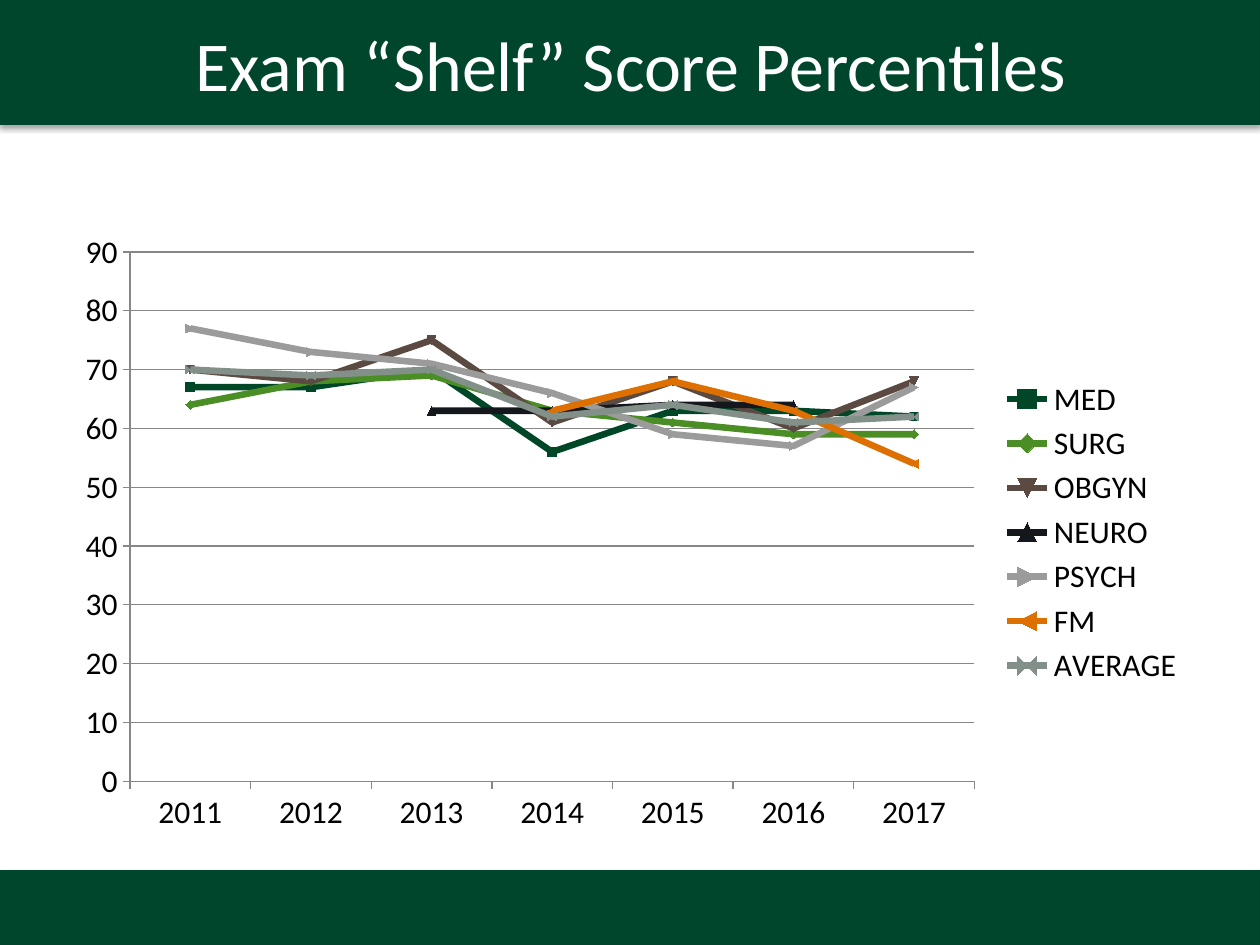
import dataclasses

import pptx
import pptx.chart.data
import pptx.dml.color
import pptx.enum.chart
import pptx.enum.shapes
import pptx.enum.text
import pptx.oxml
import pptx.oxml.ns
import pptx.util
from pptx.util import Inches


@dataclasses.dataclass(frozen=True)
class Theme:
    """Colours, font and type sizes of the deck."""

    font: str = "Calibri"
    title_size: int = 40
    chart_size: int = 18
    band: str = "00462D"
    band_edge: str = "00442D"
    title: str = "FFFFFF"
    text: str = "000000"
    axis: str = "878787"
    series: tuple = ("004728", "4B8E26", "5A4A42", "14181C", "9B9B9B", "DD7000", "83908A")


def rgb(code):
    """Turn a hex code into a colour."""
    return pptx.dml.color.RGBColor.from_string(code)


class SlideBuilder:
    """Draws styled elements on one slide."""

    def __init__(self, slide, theme):
        """Keep the slide and its style."""
        self.slide = slide
        self.theme = theme

    def set_font(self, font, size, color):
        """Apply the theme font with a size and colour."""
        font.name = self.theme.font
        font.size = pptx.util.Pt(size)
        font.bold = False
        font.color.rgb = rgb(color)

    def band(self, top, height):
        """Add a full-width band with a soft shadow."""
        band = self.slide.shapes.add_shape(
            pptx.enum.shapes.MSO_SHAPE.RECTANGLE, 0, Inches(top), Inches(10), Inches(height)
        )
        band.fill.solid()
        band.fill.fore_color.rgb = rgb(self.theme.band)
        band.line.color.rgb = rgb(self.theme.band_edge)
        band.line.width = pptx.util.Pt(0.75)
        band.shadow.inherit = False
        effects = band._element.spPr.find(pptx.oxml.ns.qn("a:effectLst"))
        effects.append(pptx.oxml.parse_xml(
            f'<a:outerShdw {pptx.oxml.ns.nsdecls("a")} blurRad="39370" dist="22860" '
            'dir="5400000" rotWithShape="0"><a:srgbClr val="000000">'
            '<a:alpha val="35000"/></a:srgbClr></a:outerShdw>'
        ))

    def title(self, text, left, top, width, height):
        """Fill the title placeholder and bring it in front of the bands."""
        title = self.slide.shapes.title
        title.left, title.top = Inches(left), Inches(top)
        title.width, title.height = Inches(width), Inches(height)
        title.text_frame.text = text
        title.text_frame.vertical_anchor = pptx.enum.text.MSO_ANCHOR.MIDDLE
        heading = title.text_frame.paragraphs[0]
        heading.alignment = pptx.enum.text.PP_ALIGN.CENTER
        self.set_font(heading.font, self.theme.title_size, self.theme.title)
        self.slide.shapes._spTree.append(title._element)

    def line_chart(self, years, scores, left, top, width, height):
        """Add a line chart with markers and a legend on the right."""
        data = pptx.chart.data.CategoryChartData()
        data.categories = years
        for name, values in scores.items():
            data.add_series(name, values)
        chart = self.slide.shapes.add_chart(
            pptx.enum.chart.XL_CHART_TYPE.LINE_MARKERS,
            Inches(left), Inches(top), Inches(width), Inches(height), data,
        ).chart
        chart.has_title = False
        self.set_font(chart.font, self.theme.chart_size, self.theme.text)
        chart.has_legend = True
        chart.legend.position = pptx.enum.chart.XL_LEGEND_POSITION.RIGHT
        chart.legend.include_in_layout = False
        chart.plots[0].vary_by_categories = False
        for series, color in zip(chart.plots[0].series, self.theme.series):
            series.smooth = False
            series.format.line.color.rgb = rgb(color)
            series.format.line.width = pptx.util.Pt(3.75)
            series.marker.size = 5
            series.marker.format.fill.solid()
            series.marker.format.fill.fore_color.rgb = rgb(color)
            series.marker.format.line.color.rgb = rgb(color)
        score_axis = chart.value_axis
        score_axis.minimum_scale, score_axis.maximum_scale = 0, 90
        score_axis.major_unit = 10
        score_axis.has_major_gridlines = True
        for axis in (chart.category_axis, score_axis):
            axis.major_tick_mark = pptx.enum.chart.XL_TICK_MARK.OUTSIDE
            axis.format.line.color.rgb = rgb(self.theme.axis)
        score_axis.major_gridlines.format.line.color.rgb = rgb(self.theme.axis)


def main():
    """Build and save the slide."""
    deck = pptx.Presentation()
    deck.slide_width, deck.slide_height = Inches(10), Inches(7.5)
    builder = SlideBuilder(deck.slides.add_slide(deck.slide_layouts[5]), Theme())

    builder.band(0, 0.99)
    builder.band(6.91, 0.59)
    builder.title("Exam “Shelf” Score Percentiles", 0.19, 0, 9.63, 1.01)

    years = [str(year) for year in range(2011, 2018)]
    scores = {
        "MED": (67, 67, 70, 56, 63, 63, 62),
        "SURG": (64, 68, 69, 63, 61, 59, 59),
        "OBGYN": (70, 68, 75, 61, 68, 60, 68),
        "NEURO": (None, None, 63, 63, 64, 64, None),
        "PSYCH": (77, 73, 71, 66, 59, 57, 67),
        "FM": (None, None, None, 63, 68, 63, 54),
        "AVERAGE": (70, 69, 70, 62, 64, 61, 62),
    }
    builder.line_chart(years, scores, 0.5, 1.75, 9, 4.95)
    deck.save("out.pptx")


if __name__ == "__main__":
    main()
